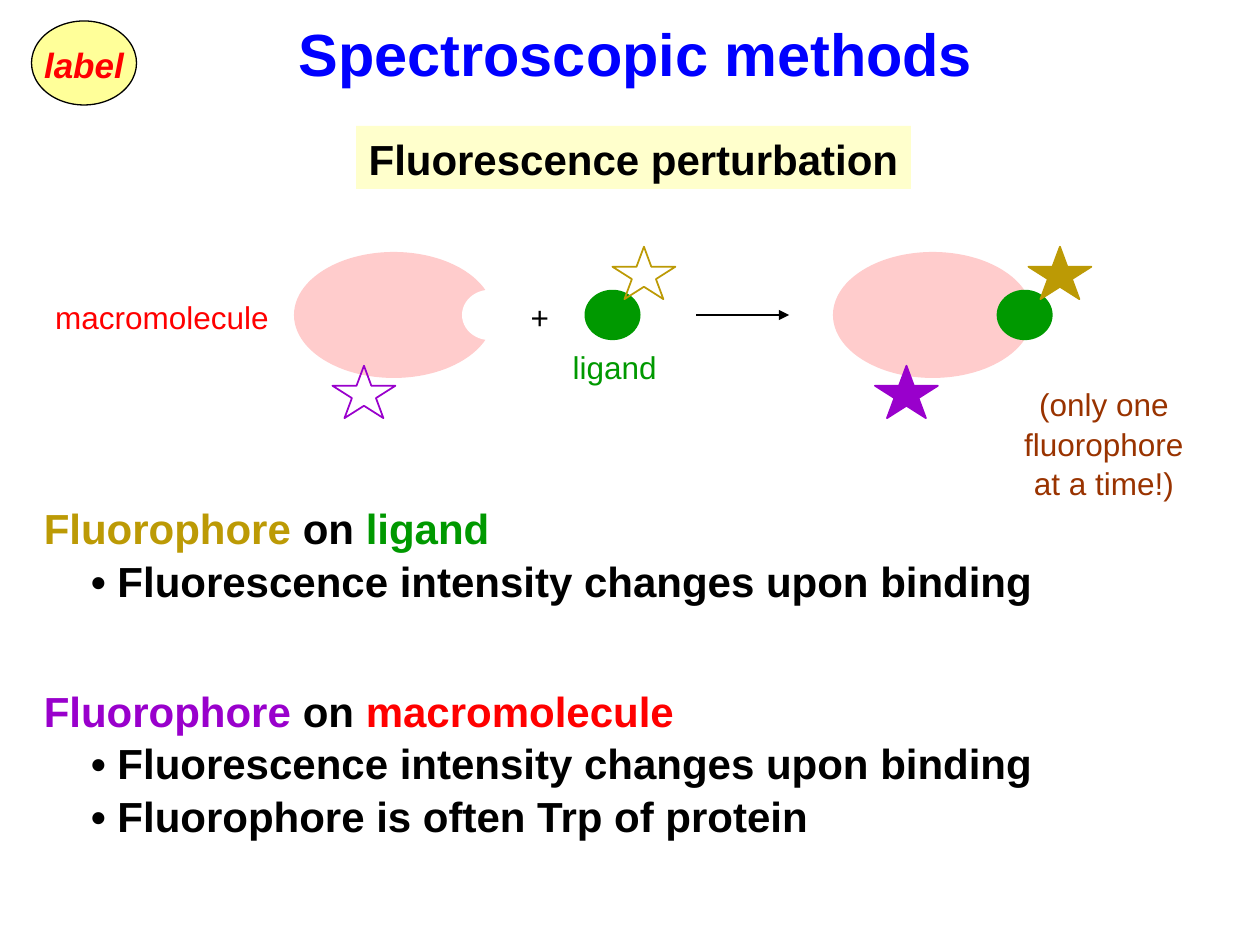
from lxml import etree
from pptx import Presentation
from pptx import util as u
from pptx.dml.color import RGBColor
from pptx.enum import shapes, text
from pptx.oxml.ns import qn

COLORS = {
    "black": "000000", "white": "FFFFFF", "blue": "0000FF", "red": "FF0000",
    "green": "009900", "gold": "BC9A05", "purple": "9900CC", "brown": "993300",
    "pink": "FFCCCC", "cream": "FFFFCC", "yellow": "FFFF99",
}
KINDS = shapes.MSO_SHAPE
INTENSITY = "• Fluorescence intensity changes upon binding"


def color(name):
    """Return the named colour."""
    return RGBColor.from_string(COLORS[name])


def points(*values):
    """Convert numbers to point lengths."""
    return [u.Pt(value) for value in values]


def add_figure(parent, kind, box, fill=None, line=None, width=1):
    """Add a preset shape with an optional fill and outline."""
    shape = parent.add_shape(kind, *points(*box))
    shape.shadow.inherit = False
    if fill:
        shape.fill.solid()
        shape.fill.fore_color.rgb = color(fill)
    else:
        shape.fill.background()
    if line:
        shape.line.color.rgb = color(line)
        shape.line.width = u.Pt(width)
    else:
        shape.line.fill.background()
    return shape


def write_paragraph(paragraph, runs, size, bold=False, italic=False, indent=0):
    """Write coloured runs into a paragraph."""
    paragraph.line_spacing = 1.05
    if indent:
        properties = paragraph._p.get_or_add_pPr()
        properties.set("marL", "0")
        properties.set("indent", str(u.Pt(indent)))
    for words, name in runs:
        run = paragraph.add_run()
        run.text = words
        run.font.name = "Arial"
        run.font.size = u.Pt(size)
        run.font.bold = bold
        run.font.italic = italic
        run.font.color.rgb = color(name)


def add_label(parent, box, lines, name, size=18, bold=False, italic=False):
    """Add a text box of centred lines in one colour."""
    frame = parent.add_textbox(*points(*box)).text_frame
    frame.word_wrap = False
    for number, words in enumerate(lines):
        paragraph = frame.add_paragraph() if number else frame.paragraphs[0]
        paragraph.alignment = text.PP_ALIGN.CENTER
        write_paragraph(paragraph, [(words, name)], size, bold, italic)


def add_case(parent, box, heading, bullets):
    """Add a coloured heading followed by its bulleted statements."""
    frame = parent.add_textbox(*points(*box)).text_frame
    frame.word_wrap = True
    write_paragraph(frame.paragraphs[0], heading, 24, bold=True)
    for bullet in bullets:
        write_paragraph(frame.add_paragraph(), [(bullet, "black")], 24, bold=True, indent=27)


def add_arrow(parent, start, end):
    """Add a black reaction arrow."""
    arrow = parent.add_connector(shapes.MSO_CONNECTOR.STRAIGHT, *points(*start, *end))
    arrow.line.color.rgb = color("black")
    arrow.line.width = u.Pt(1.5)
    etree.SubElement(arrow.line._get_or_add_ln(), qn("a:tailEnd"), type="triangle")
    etree.SubElement(arrow._element.spPr, qn("a:effectLst"))


def add_heading(parent):
    """Add the badge, the title and the subtitle."""
    add_label(parent, (24.5, 4.3, 677.5, 48), ["Spectroscopic methods"], "blue", 34, bold=True)
    subtitle = add_figure(parent, KINDS.RECTANGLE, (203.5, 72, 317, 36), "cream")
    subtitle.text_frame.word_wrap = False
    paragraph = subtitle.text_frame.paragraphs[0]
    paragraph.alignment = text.PP_ALIGN.CENTER
    write_paragraph(paragraph, [("Fluorescence perturbation", "black")], 24, bold=True)
    badge = parent.add_group_shape().shapes
    add_figure(badge, KINDS.OVAL, (18, 12, 60, 48), "yellow", "black", 0.75)
    add_label(badge, (18, 20.2, 60, 31), ["label"], "red", 20, bold=True, italic=True)


def add_reaction(parent):
    """Draw the binding of the ligand to the macromolecule."""
    for left in (168, 476):
        add_figure(parent, KINDS.OVAL, (left, 144, 114, 72), "pink")
    for left, fill in ((264, "white"), (334, "green"), (569.5, "green")):
        add_figure(parent, KINDS.OVAL, (left, 165.6, 32, 28.8), fill)
    add_label(parent, (24, 165.6, 137, 29), ["macromolecule"], "red")
    add_label(parent, (320, 194.4, 62.5, 29), ["ligand"], "green")
    add_label(parent, (296, 165.6, 25, 29), ["+"], "black")
    add_arrow(parent, (398, 180), (451, 180))
    for name, top, free, bound in (("gold", 141, 350, 587.7), ("purple", 209, 190, 500)):
        add_figure(parent, KINDS.STAR_5_POINT, (free, top, 36, 30), line=name)
        add_figure(parent, KINDS.STAR_5_POINT, (bound, top, 36, 30), name, name)
    add_label(parent, (577.5, 215.3, 106.5, 72.7),
              ["(only one", "fluorophore", "at a time!)"], "brown")


def main():
    """Build and save the slide."""
    presentation = Presentation()
    presentation.slide_width, presentation.slide_height = points(720, 540)
    slide = presentation.slides.add_slide(presentation.slide_layouts[6])
    add_heading(slide.shapes)
    add_reaction(slide.shapes)
    add_case(slide.shapes, (18, 282, 579, 65),
             [("Fluorophore ", "gold"), ("on", "black"), (" ligand", "green")],
             [INTENSITY])
    add_case(slide.shapes, (18, 386.5, 579, 93.5),
             [("Fluorophore ", "purple"), ("on", "black"), (" macromolecule", "red")],
             [INTENSITY, "• Fluorophore is often Trp of protein"])
    presentation.save("out.pptx")


if __name__ == "__main__":
    main()
